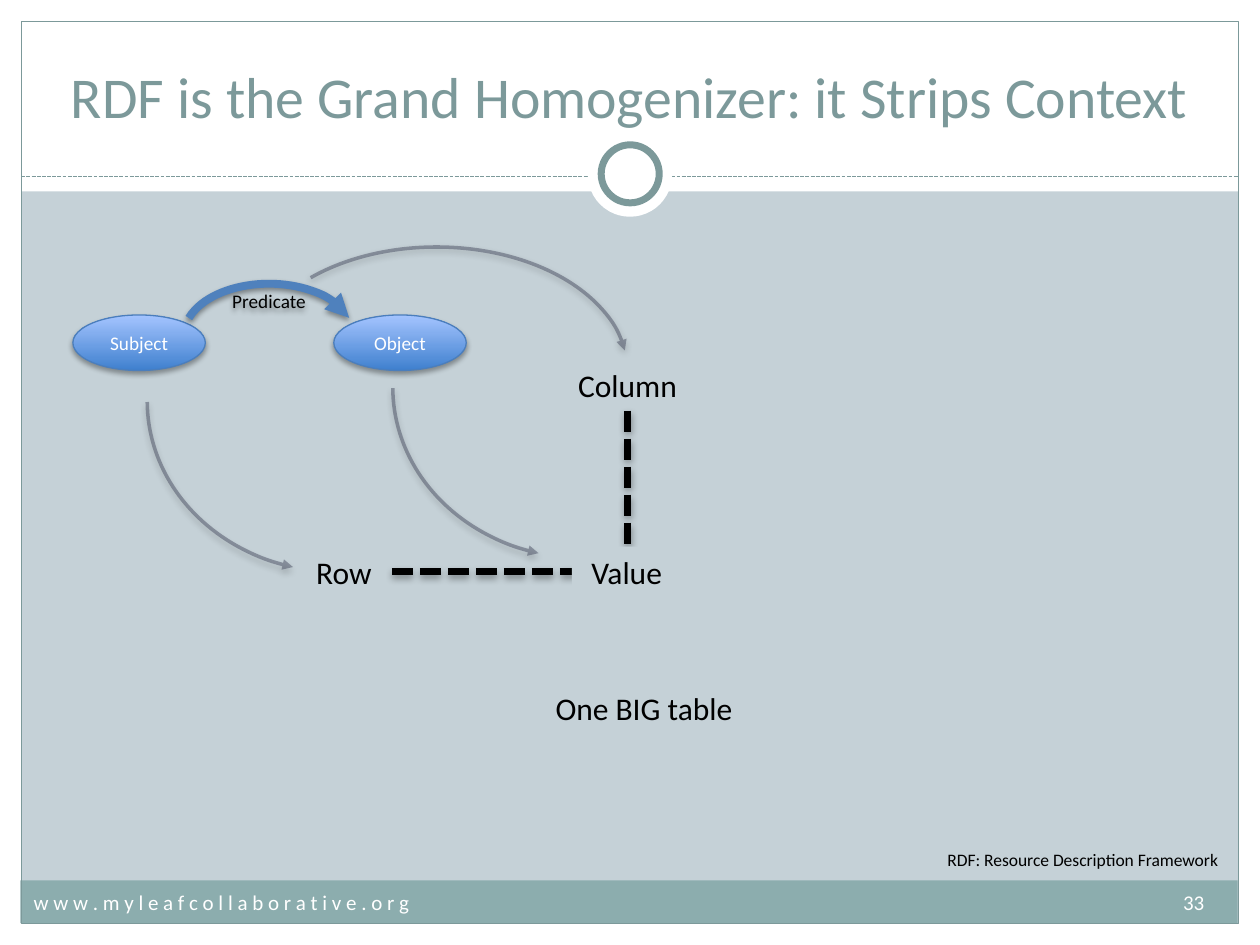
from lxml.etree import SubElement
from pptx import Presentation
from pptx.dml.color import RGBColor
from pptx.enum.dml import MSO_LINE
from pptx.enum.shapes import MSO_CONNECTOR, MSO_SHAPE
from pptx.enum.text import MSO_ANCHOR, MSO_AUTO_SIZE, PP_ALIGN
from pptx.oxml.ns import qn
from pptx.util import Cm, Pt

rgb = RGBColor.from_string
LEFT, CENTER = PP_ALIGN.LEFT, PP_ALIGN.CENTER
GROW, FIXED = MSO_AUTO_SIZE.SHAPE_TO_FIT_TEXT, MSO_AUTO_SIZE.NONE
WHITE, BLACK, TEAL, GROUND = "FFFFFF", "000000", "7C999A", "C5D1D7"
SOFT = (35, 4, 2)


def style(sp, line=None, width=0.75, dash=None, shadow=None, arrow=None, alpha=None):
    if line:
        sp.line.color.rgb = rgb(line)
        sp.line.width = Pt(width)
        if dash:
            sp.line.dash_style = dash
    else:
        sp.line.fill.background()
    ln = sp.line._get_or_add_ln()
    if alpha:
        color = ln.find(".//" + qn("a:srgbClr"))
        SubElement(color, qn("a:alpha"), val=str(alpha * 1000))
    if arrow:
        SubElement(ln, qn(f"a:{arrow}End"), type="triangle")
    effects = SubElement(sp._element.spPr, qn("a:effectLst"))
    if shadow:
        opacity, blur, dist = shadow
        outer = SubElement(effects, qn("a:outerShdw"), blurRad=str(Pt(blur)),
                           dist=str(Pt(dist)), dir="5400000", rotWithShape="0")
        color = SubElement(outer, qn("a:srgbClr"), val=BLACK)
        SubElement(color, qn("a:alpha"), val=str(opacity * 1000))


def write(sp, text, size, color, align=CENTER, anchor=MSO_ANCHOR.TOP, wrap=True, fit=FIXED):
    tf = sp.text_frame
    frame = {"word_wrap": wrap, "auto_size": fit, "vertical_anchor": anchor}
    for name, value in frame.items():
        setattr(tf, name, value)
    p = tf.paragraphs[0]
    p.alignment = align
    r = p.add_run()
    r.text = text
    for name, value in {"name": "Calibri", "size": Pt(size)}.items():
        setattr(r.font, name, value)
    r.font.color.rgb = rgb(color)


prs = Presentation()
prs.slide_width, prs.slide_height = Cm(25.4), Cm(19.05)
s = prs.slides.add_slide(prs.slide_layouts[5])
s.background.fill.solid()
s.background.fill.fore_color.rgb = rgb(GROUND)

bands = [
    (0, 18.62, 25.4, 0.43, WHITE),
    (0, 0, 25.4, 3.86, WHITE),
    (0, 0, 0.43, 19.05, WHITE),
    (24.97, 0, 0.43, 19.05, WHITE),
    (0.41, 17.75, 24.54, 0.86, "8CADAE"),
]
for *box, fill in bands:
    sp = s.shapes.add_shape(MSO_SHAPE.RECTANGLE, *map(Cm, box))
    sp.fill.solid()
    sp.fill.fore_color.rgb = rgb(fill)
    style(sp)

frame = s.shapes.add_shape(MSO_SHAPE.RECTANGLE, Cm(0.43), Cm(0.43), Cm(24.54), Cm(18.19))
frame.fill.background()
style(frame, TEAL)

rule = s.shapes.add_connector(MSO_CONNECTOR.STRAIGHT, Cm(0.43), Cm(3.56), Cm(24.97), Cm(3.56))
style(rule, TEAL, dash=MSO_LINE.SQUARE_DOT)

for left, top, size, line in [(11.85, 2.67, 1.7, None), (12.12, 2.92, 1.17, TEAL)]:
    sp = s.shapes.add_shape(MSO_SHAPE.OVAL, Cm(left), Cm(top), Cm(size), Cm(size))
    sp.fill.solid()
    sp.fill.fore_color.rgb = rgb(WHITE)
    style(sp, line, 4)

title = s.shapes.title
place = {"left": 0.84, "top": 0.64, "width": 23.7, "height": 2.11}
for name, value in place.items():
    setattr(title, name, Cm(value))
write(title, "RDF is the Grand Homogenizer: it Strips Context", 33, TEAL, anchor=MSO_ANCHOR.BOTTOM)
sp._element.addnext(title._element)

footer = s.shapes.add_textbox(Cm(0.43), Cm(17.81), Cm(24.51), Cm(1.02))
write(footer, "w w w . m y l e a f c o l l a b o r a t i v e . o r g\t33", 12, WHITE, LEFT, wrap=False)
tabs = SubElement(footer.text_frame.paragraphs[0]._p.get_or_add_pPr(), qn("a:tabLst"))
SubElement(tabs, qn("a:tab"), pos=str(Cm(23.6)), algn="r")

for left, text in [(1.47, "Subject"), (6.73, "Object")]:
    sp = s.shapes.add_shape(MSO_SHAPE.OVAL, Cm(left), Cm(6.35), Cm(2.67), Cm(1.12))
    sp.fill.gradient()
    sp.fill.gradient_angle = 90
    for stop, color in zip(sp.fill.gradient_stops, ("3F80CE", "A4C4FF")):
        stop.color.rgb = rgb(color)
    style(sp, "4B7EBC", shadow=(35, 3.1, 1.8))
    write(sp, text, 11, WHITE, anchor=MSO_ANCHOR.MIDDLE)

predicate = {"line": "4F81BD", "width": 4.5, "shadow": (38, 3.1, 1.6), "arrow": "tail"}
mapping = {"line": "4B5064", "width": 2, "shadow": SOFT, "alpha": 50}
to_cell = {**mapping, "arrow": "head"}
to_column = {**mapping, "arrow": "tail"}
arcs = [
    (3.71, 5.72, 3.43, 2.08, (115.28, 208.63), predicate, "Predicate"),
    (2.97, 4.65, 7.7, 6.88, (63.16, 107.87), to_cell, None),
    (7.92, 4.37, 7.7, 6.88, (63.16, 107.87), to_cell, None),
    (4.95, 4.98, 7.7, 5, (129.93, 212.26), to_column, None),
]
for *box, angles, look, text in arcs:
    sp = s.shapes.add_shape(MSO_SHAPE.ARC, *map(Cm, box))
    sp.adjustments[0], sp.adjustments[1] = angles
    sp.fill.background()
    style(sp, **look)
    if text:
        write(sp, text, 11, BLACK, anchor=MSO_ANCHOR.MIDDLE)

labels = [
    (18.85, 16.99, 6.07, 0.69, "RDF: Resource Description Framework", 10, LEFT, False),
    (10.95, 13.77, 4.11, 1.02, "One BIG table", 18, LEFT, False),
    (11.15, 7.26, 3, 1.02, "Column", 18, CENTER, True),
    (5.97, 11.02, 1.93, 1.02, "Row", 18, CENTER, True),
]
boxes = {}
for *box, text, size, align, wrap in labels:
    sp = s.shapes.add_textbox(*map(Cm, box))
    write(sp, text, size, BLACK, align, wrap=wrap, fit=GROW)
    boxes[text] = sp

for name, side in [("Column", 2), ("Row", 3)]:
    sp = s.shapes.add_connector(MSO_CONNECTOR.STRAIGHT, 0, 0, Cm(12.65), Cm(11.53))
    sp.begin_connect(boxes[name], side)
    style(sp, BLACK, 4, MSO_LINE.SQUARE_DOT, SOFT)

value = s.shapes.add_shape(MSO_SHAPE.RECTANGLE, Cm(11.53), Cm(11.02), Cm(2.21), Cm(1.02))
value.fill.solid()
value.fill.fore_color.rgb = rgb(GROUND)
style(value)
write(value, "Value", 18, BLACK, fit=GROW)

prs.save("out.pptx")
